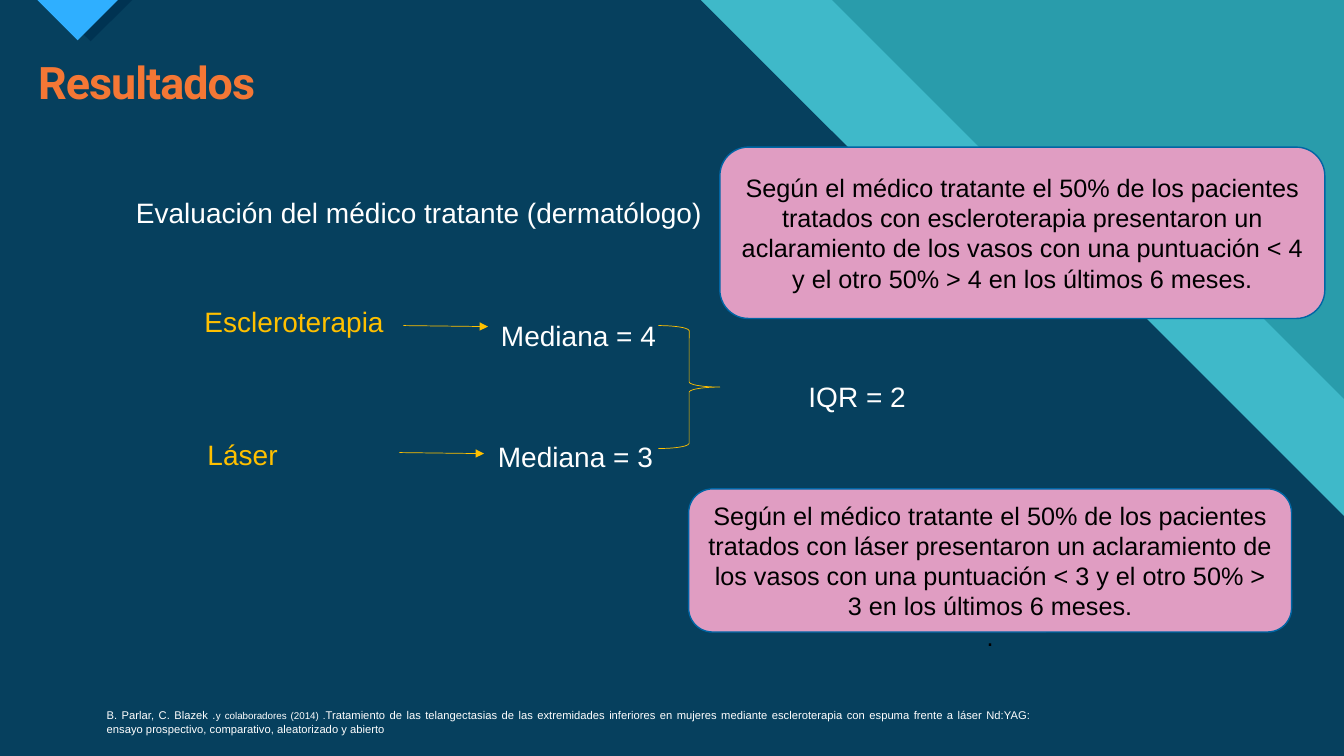
from dataclasses import dataclass

from lxml import etree
from pptx import Presentation
from pptx.dml.color import RGBColor
from pptx.enum.shapes import MSO_CONNECTOR, MSO_SHAPE
from pptx.enum.text import MSO_ANCHOR, PP_ALIGN
from pptx.oxml.ns import qn
from pptx.util import Inches, Pt

STRAIGHT = MSO_CONNECTOR.STRAIGHT
ROUNDED, BRACE = MSO_SHAPE.ROUNDED_RECTANGLE, MSO_SHAPE.RIGHT_BRACE
MIDDLE = MSO_ANCHOR.MIDDLE
LEFT, CENTER, JUSTIFY = PP_ALIGN.LEFT, PP_ALIGN.CENTER, PP_ALIGN.JUSTIFY

COLORS = {
    "teal": "299CAB", "cyan": "3FB9C9", "navy": "06405E", "shade": "003352",
    "blue": "2FAFFF", "orange": "F47735", "gold": "FFC000", "white": "FFFFFF",
    "black": "000000", "pink": "E09DC2", "outline": "0065A4",
}
WIDTH, HEIGHT = 13.33, 7.5
INSET = 0.05


@dataclass
class Area:
    points: list[tuple[float, float]]
    color: str


@dataclass
class Label:
    text: str
    left: float
    top: float
    width: float
    color: str = "white"


@dataclass
class Callout:
    paragraphs: list[str]
    left: float
    top: float
    width: float
    height: float
    inset_top: float = INSET


@dataclass
class Arrow:
    left: float
    top: float


AREAS = [
    Area([(0, 0), (8.25, 0), (11.22, 2.97), (12.34, 2.97), (WIDTH, 3.96),
          (WIDTH, HEIGHT), (0, HEIGHT)], "cyan"),
    Area([(0, 0), (6.95, 0), (9.92, 2.97), (11.18, 2.97), (WIDTH, 5.12),
          (WIDTH, HEIGHT), (0, HEIGHT)], "navy"),
    Area([(0.48, 0), (1.31, 0), (0.9, 0.41)], "shade"),
    Area([(0.37, 0), (1.17, 0), (0.77, 0.4)], "blue"),
]
LABELS = [
    Label("Evaluación del médico tratante (dermatólogo)", 1.25, 1.89, 5.86),
    Label("Escleroterapia", 1.93, 2.97, 2.16, "gold"),
    Label("Láser", 1.96, 4.29, 1.83, "gold"),
    Label("Mediana = 4", 4.87, 3.11, 1.77),
    Label("Mediana = 3", 4.84, 4.31, 1.77),
    Label("IQR = 2", 7.92, 3.72, 1.77),
]
ARROWS = [Arrow(4, 3.23), Arrow(3.96, 4.49)]
CALLOUTS = [
    Callout(["Según el médico tratante el 50% de los pacientes tratados con "
             "escleroterapia presentaron un aclaramiento de los vasos con una "
             "puntuación < 4 y el otro 50% > 4 en los últimos 6 meses."],
            7.14, 1.46, 6, 1.7),
    Callout(["Según el médico tratante el 50% de los pacientes tratados con "
             "láser presentaron un aclaramiento de los vasos con una "
             "puntuación < 3 y el otro 50% > 3 en los últimos 6 meses.", "."],
            6.83, 4.85, 5.98, 1.42, inset_top=0.35),
]
CITATION = [
    ("B. Parlar, C. Blazek .", 8),
    ("y colaboradores (2014) .", 7),
    ("Tratamiento de las telangectasias de las extremidades inferiores en "
     "mujeres mediante escleroterapia con espuma frente a láser Nd:YAG: "
     "ensayo prospectivo, comparativo, aleatorizado y abierto", 8),
]


def rgb(name: str) -> RGBColor:
    return RGBColor.from_string(COLORS[name])


def add_span(para, text: str, *, size: float = 20, color: str = "white",
             font: str = "Arial", bold: bool = False, align=LEFT):
    para.alignment = align
    span = para.add_run()
    span.text = text
    span.font.size = Pt(size)
    span.font.name = font
    span.font.bold = bold
    span.font.color.rgb = rgb(color)
    return span


def add_box(page, left: float, top: float, width: float, height: float):
    """Add a wrapping text box and return its first paragraph."""
    box = page.shapes.add_textbox(Inches(left), Inches(top),
                                  Inches(width), Inches(height))
    box.text_frame.word_wrap = True
    return box.text_frame.paragraphs[0]


def draw_area(page, area: Area) -> None:
    corners = [(Inches(x), Inches(y)) for x, y in area.points]
    builder = page.shapes.build_freeform(*corners[0])
    builder.add_line_segments(corners[1:], close=True)
    shape = builder.convert_to_shape()
    shape.shadow.inherit = False
    shape.fill.solid()
    shape.fill.fore_color.rgb = rgb(area.color)
    shape.line.fill.background()


def draw_arrow(page, arrow: Arrow) -> None:
    line = page.shapes.add_connector(
        STRAIGHT, Inches(arrow.left), Inches(arrow.top),
        Inches(arrow.left + 0.84), Inches(arrow.top + 0.01))
    line.line.color.rgb = rgb("gold")
    line.line.width = Pt(0.5)
    etree.SubElement(line.line._get_or_add_ln(), qn("a:tailEnd"), type="triangle")
    etree.SubElement(line._element.spPr, qn("a:effectLst"))


def draw_brace(page) -> None:
    brace = page.shapes.add_shape(BRACE, Inches(6.53), Inches(3.23),
                                  Inches(0.61), Inches(1.22))
    brace.shadow.inherit = False
    brace.fill.background()
    brace.line.color.rgb = rgb("gold")
    brace.line.width = Pt(0.5)


def draw_callout(page, callout: Callout) -> None:
    shape = page.shapes.add_shape(
        ROUNDED, Inches(callout.left), Inches(callout.top),
        Inches(callout.width), Inches(callout.height))
    shape.shadow.inherit = False
    shape.fill.solid()
    shape.fill.fore_color.rgb = rgb("pink")
    shape.line.color.rgb = rgb("outline")
    shape.line.width = Pt(1)
    frame = shape.text_frame
    frame.word_wrap = True
    frame.vertical_anchor = MIDDLE
    frame.margin_top = Inches(callout.inset_top)
    for index, text in enumerate(callout.paragraphs):
        para = frame.add_paragraph() if index else frame.paragraphs[0]
        add_span(para, text, size=18, color="black", align=CENTER)


def main() -> None:
    deck = Presentation()
    deck.slide_width, deck.slide_height = Inches(WIDTH), Inches(HEIGHT)
    page = deck.slides.add_slide(deck.slide_layouts[6])

    # Background bands and corner triangle
    page.background.fill.solid()
    page.background.fill.fore_color.rgb = rgb("teal")
    for area in AREAS:
        draw_area(page, area)

    # Title
    para = add_box(page, 0.28, 0.55, 12.26, 0.59)
    para.line_spacing = 0.9
    title = add_span(para, "Resultados", size=32, color="orange",
                     font="Roboto", bold=True)
    title.font._element.set("spc", "-70")

    # Citation
    para = add_box(page, 0.96, 6.98, 9.37, 0.37)
    for text, size in CITATION:
        add_span(para, text, size=size, align=JUSTIFY)

    # Treatments, medians and range
    for label in LABELS:
        para = add_box(page, label.left, label.top, label.width, 0.44)
        add_span(para, label.text, color=label.color)
    for arrow in ARROWS:
        draw_arrow(page, arrow)
    draw_brace(page)

    # Interpretations
    for callout in CALLOUTS:
        draw_callout(page, callout)

    deck.save("out.pptx")


if __name__ == "__main__":
    main()
